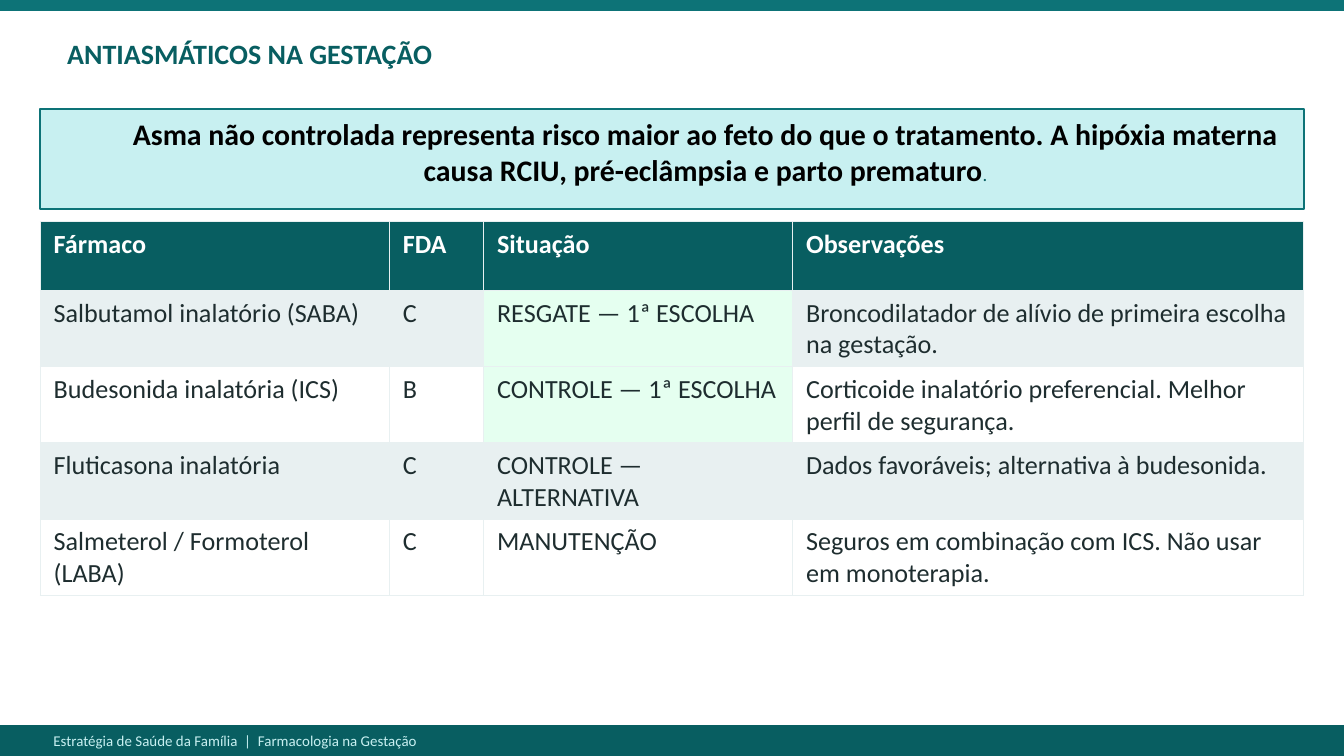
from lxml.etree import SubElement
from pptx import Presentation
from pptx.dml.color import RGBColor
from pptx.enum.shapes import MSO_SHAPE
from pptx.enum.text import MSO_ANCHOR, PP_ALIGN
from pptx.oxml.ns import qn
from pptx.util import Cm, Pt

COLORS = {
    "teal": "0D7377", "dark": "085E61", "pale": "C8F0F1", "band": "E8F0F1",
    "green": "E5FFF0", "ink": "1E2D2F", "white": "FFFFFF", "black": "000000",
}


def color(name):
    return RGBColor.from_string(COLORS[name])


def set_font(font, size, color_name, bold=False):
    font.name = "Calibri"
    font.size = Pt(size)
    font.bold = bold
    font.color.rgb = color(color_name)


presentation = Presentation()
presentation.slide_width = Cm(25.4)
presentation.slide_height = Cm(14.29)
slide = presentation.slides.add_slide(presentation.slide_layouts[6])

# Top bar, footer bar and highlighted box
for left, top, width, height, fill, line in [
    (0, 0, 25.4, 0.2, "teal", "teal"),
    (0, 13.72, 25.4, 0.57, "dark", "dark"),
    (0.76, 2.06, 23.88, 1.9, "pale", "teal"),
]:
    shape = slide.shapes.add_shape(
        MSO_SHAPE.RECTANGLE, Cm(left), Cm(top), Cm(width), Cm(height))
    shape.shadow.inherit = False
    shape.fill.solid()
    shape.fill.fore_color.rgb = color(fill)
    shape.line.color.rgb = color(line)
    shape.line.width = Pt(1)

# Footer, title and key message
warning = ("Asma não controlada representa risco maior ao feto do que o tratamento. "
           "A hipóxia materna causa RCIU, pré-eclâmpsia e parto prematuro")
for left, top, width, height, alignment, runs in [
    (0.76, 13.74, 23.88, 0.51, PP_ALIGN.LEFT,
     [("Estratégia de Saúde da Família  |  Farmacologia na Gestação", 8, "pale", False)]),
    (1.02, 0.38, 23.37, 1.27, PP_ALIGN.LEFT,
     [("ANTIASMÁTICOS NA GESTAÇÃO", 15, "dark", True)]),
    (1.78, 1.83, 23.11, 2.08, PP_ALIGN.CENTER,
     [(warning, 16, "black", True), (".", 10, "dark", False)]),
]:
    text_box = slide.shapes.add_textbox(Cm(left), Cm(top), Cm(width), Cm(height))
    text_frame = text_box.text_frame
    text_frame.word_wrap = True
    text_frame.vertical_anchor = MSO_ANCHOR.MIDDLE
    paragraph = text_frame.paragraphs[0]
    paragraph.alignment = alignment
    for text, size, color_name, bold in runs:
        run = paragraph.add_run()
        run.text = text
        target = paragraph if len(runs) == 1 else run
        set_font(target.font, size, color_name, bold)

# Drug table
rows = [
    ("Fármaco", "FDA", "Situação", "Observações"),
    ("Salbutamol inalatório (SABA)", "C", "RESGATE — 1ª ESCOLHA",
     "Broncodilatador de alívio de primeira escolha na gestação."),
    ("Budesonida inalatória (ICS)", "B", "CONTROLE — 1ª ESCOLHA",
     "Corticoide inalatório preferencial. Melhor perfil de segurança."),
    ("Fluticasona inalatória", "C", "CONTROLE — ALTERNATIVA",
     "Dados favoráveis; alternativa à budesonida."),
    ("Salmeterol / Formoterol (LABA)", "C", "MANUTENÇÃO",
     "Seguros em combinação com ICS. Não usar em monoterapia."),
]
column_widths = [6.6, 1.78, 5.84, 9.65]
row_height = 1.3
table = slide.shapes.add_table(
    len(rows), len(column_widths), Cm(0.76), Cm(4.19),
    Cm(sum(column_widths)), Cm(row_height * len(rows))).table
for column, width in zip(table.columns, column_widths):
    column.width = Cm(width)

for row_index, row in enumerate(rows):
    for column_index, text in enumerate(row):
        cell = table.cell(row_index, column_index)
        cell.text = text
        header = row_index == 0
        set_font(cell.text_frame.paragraphs[0].font, 14,
                 "white" if header else "ink", header)

        # Thin borders go before the fill in the cell properties
        properties = cell._tc.get_or_add_tcPr()
        for side in ("a:lnL", "a:lnR", "a:lnT", "a:lnB"):
            border = SubElement(properties, qn(side), w=str(Pt(0.5)))
            solid = SubElement(border, qn("a:solidFill"))
            SubElement(solid, qn("a:srgbClr"), val=COLORS["band"])

        if header:
            fill = "dark"
        elif "1ª ESCOLHA" in text:
            fill = "green"
        else:
            fill = "band" if row_index % 2 else "white"
        cell.fill.solid()
        cell.fill.fore_color.rgb = color(fill)

presentation.save("out.pptx")
